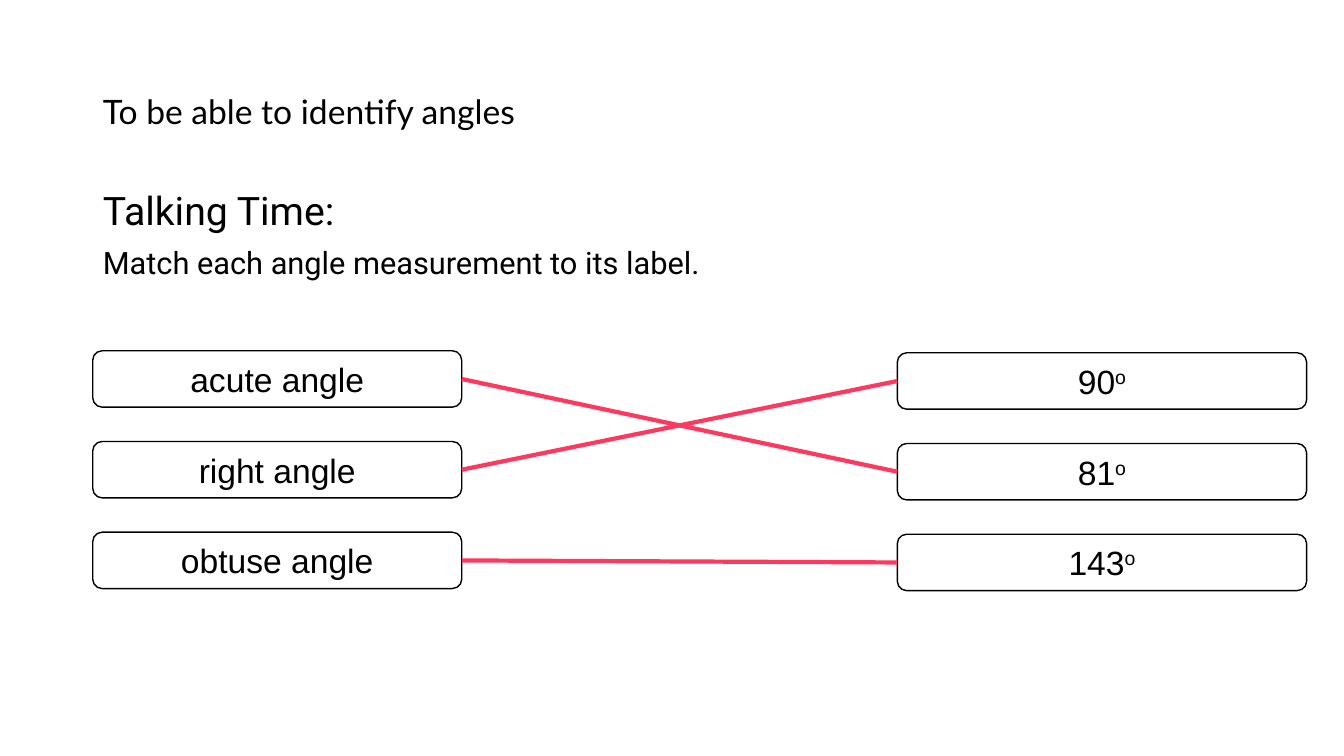
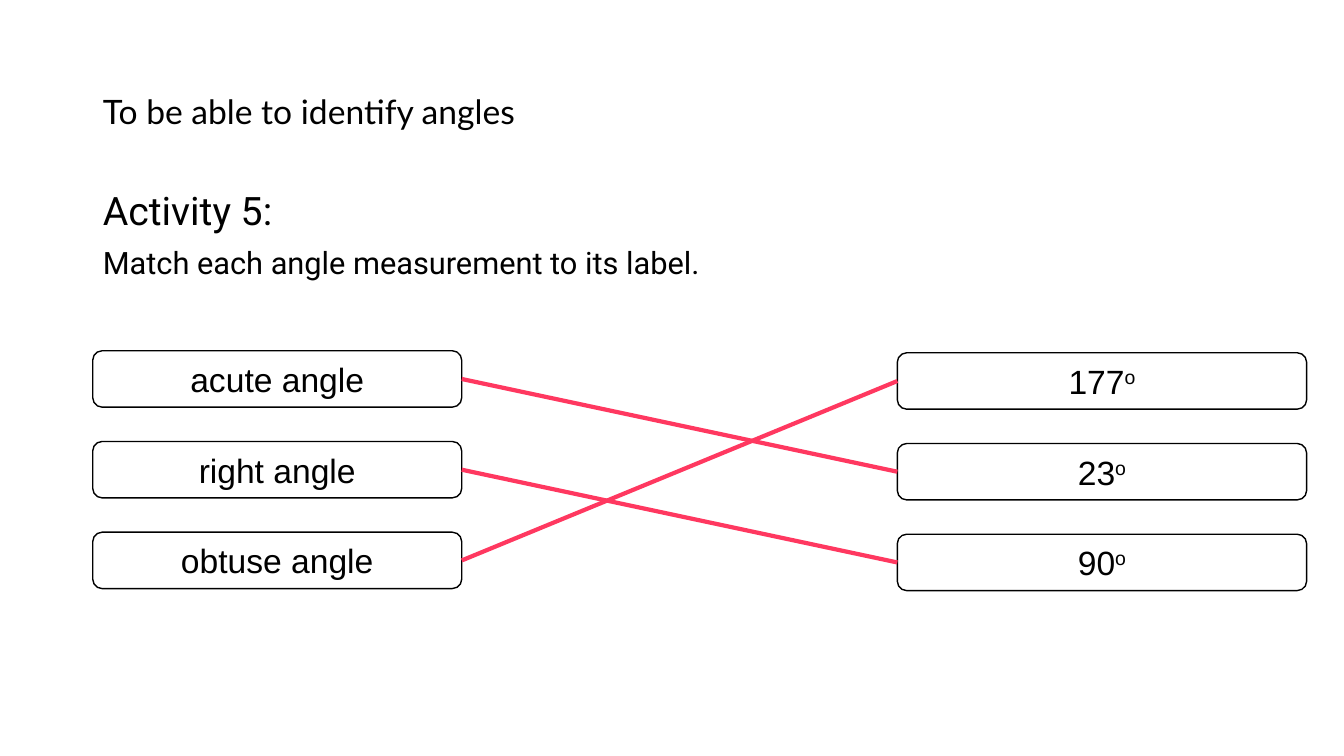
import pptx
import pptx.dml.color
import pptx.enum.shapes
import pptx.enum.text
import pptx.oxml
import pptx.oxml.ns
import pptx.util

Inches = pptx.util.Inches
Pt = pptx.util.Pt
ALIGN = pptx.enum.text.PP_ALIGN
ANCHOR = pptx.enum.text.MSO_ANCHOR

BLACK, WHITE, PINK = "000000", "FFFFFF", "FF3860"
OBJECTIVE = "To be able to identify angles"
INSTRUCTION = "Match each angle measurement to its label."
ANGLE_LABELS = ["acute angle", "right angle", "obtuse angle"]

# Heading, measurements, and the row of the measurement each label matches
ACTIVITIES = [
    ("Talking Time:", [90, 81, 143], [1, 0, 2]),
    ("Activity 5:", [177, 23, 90], [1, 2, 0]),
]


def rgb(value):
    return pptx.dml.color.RGBColor.from_string(value)


def write(paragraph, text, *, font, size, color=BLACK, align=ALIGN.LEFT,
          spacing=None, before=None, raised=False):
    """Add a run of text to a paragraph and format both."""
    paragraph.alignment = align
    if spacing is not None:
        paragraph.line_spacing = spacing
    if before is not None:
        paragraph.space_before = Pt(before)
    run = paragraph.add_run()
    run.text = text
    run.font.name, run.font.size = font, Pt(size)
    run.font.color.rgb = rgb(color)
    if raised:
        run.font._element.set("baseline", "30000")


class Lesson:
    title_font, body_font, box_font = "Lato", "Roboto", "Arial"
    left, row_top, row_pitch, box_height = 0.92, 3.48, 0.9, 0.56
    line_spacing = 0.9

    def __init__(self):
        self.deck = pptx.Presentation()
        self.deck.slide_width = Inches(13.33)
        self.deck.slide_height = Inches(7.5)
        background = self.deck.slide_master.background.fill
        background.solid()
        background.fore_color.rgb = rgb(WHITE)
        self.slide = None

    def new_slide(self):
        self.slide = self.deck.slides.add_slide(self.deck.slide_layouts[1])

    def place(self, holder, top, width, height, anchor):
        """Move a placeholder and return its text frame."""
        holder.left, holder.top = Inches(self.left), Inches(top)
        holder.width, holder.height = Inches(width), Inches(height)
        frame = holder.text_frame
        frame.word_wrap = True
        frame.auto_size = pptx.enum.text.MSO_AUTO_SIZE.NONE
        frame.vertical_anchor = anchor
        return frame

    def title(self, text):
        frame = self.place(self.slide.shapes.title, 0.4, 9.6, 1.45, ANCHOR.MIDDLE)
        write(frame.paragraphs[0], text, font=self.title_font, size=24,
              spacing=self.line_spacing)

    def body(self, heading, instruction):
        frame = self.place(self.slide.placeholders[1], 1.85, 12.05, 4.76, ANCHOR.TOP)
        for text, size, before in [(heading, 28, 0), (instruction, 22, 10)]:
            paragraph = frame.add_paragraph() if before else frame.paragraphs[0]
            properties = paragraph._p.get_or_add_pPr()
            properties.set("marL", "0")
            properties.set("indent", "0")
            properties.append(pptx.oxml.parse_xml(
                "<a:buNone %s/>" % pptx.oxml.ns.nsdecls("a")))
            write(paragraph, text, font=self.body_font, size=size,
                  spacing=self.line_spacing, before=before)

    def box(self, left, top, width, text, degrees=False):
        box = self.slide.shapes.add_shape(
            pptx.enum.shapes.MSO_SHAPE.ROUNDED_RECTANGLE,
            Inches(left), Inches(top), Inches(width), Inches(self.box_height))
        box.shadow.inherit = False
        box.fill.solid()
        box.fill.fore_color.rgb = rgb(WHITE)
        box.line.color.rgb = rgb(BLACK)
        box.line.width = Pt(1)
        paragraph = box.text_frame.paragraphs[0]
        style = dict(font=self.box_font, size=24, align=ALIGN.CENTER)
        write(paragraph, text, **style)
        if degrees:
            write(paragraph, "o", raised=True, **style)
        return box

    def column(self, left, top, width, texts, degrees=False):
        return [self.box(left, top + row * self.row_pitch, width, str(text), degrees)
                for row, text in enumerate(texts)]

    def match(self, label, measurement):
        """Join the right side of a label to the left side of a measurement."""
        link = self.slide.shapes.add_connector(
            pptx.enum.shapes.MSO_CONNECTOR.STRAIGHT, 0, 0, 0, 0)
        link.begin_connect(label, 3)
        link.end_connect(measurement, 1)
        link.line.color.rgb = rgb(PINK)
        link.line.width = Pt(3)
        link._element.spPr.append(pptx.oxml.parse_xml(
            "<a:effectLst %s/>" % pptx.oxml.ns.nsdecls("a")))


def main():
    lesson = Lesson()
    for heading, angles, answers in ACTIVITIES:
        # Objective and task
        lesson.new_slide()
        lesson.title(OBJECTIVE)
        lesson.body(heading, INSTRUCTION)

        # Labels, measurements and the lines that match them
        labels = lesson.column(lesson.left, lesson.row_top, 3.66, ANGLE_LABELS)
        measurements = lesson.column(8.9, lesson.row_top + 0.02, 4.06, angles,
                                     degrees=True)
        for label, answer in zip(labels, answers):
            lesson.match(label, measurements[answer])
    lesson.deck.save("out.pptx")


if __name__ == "__main__":
    main()
